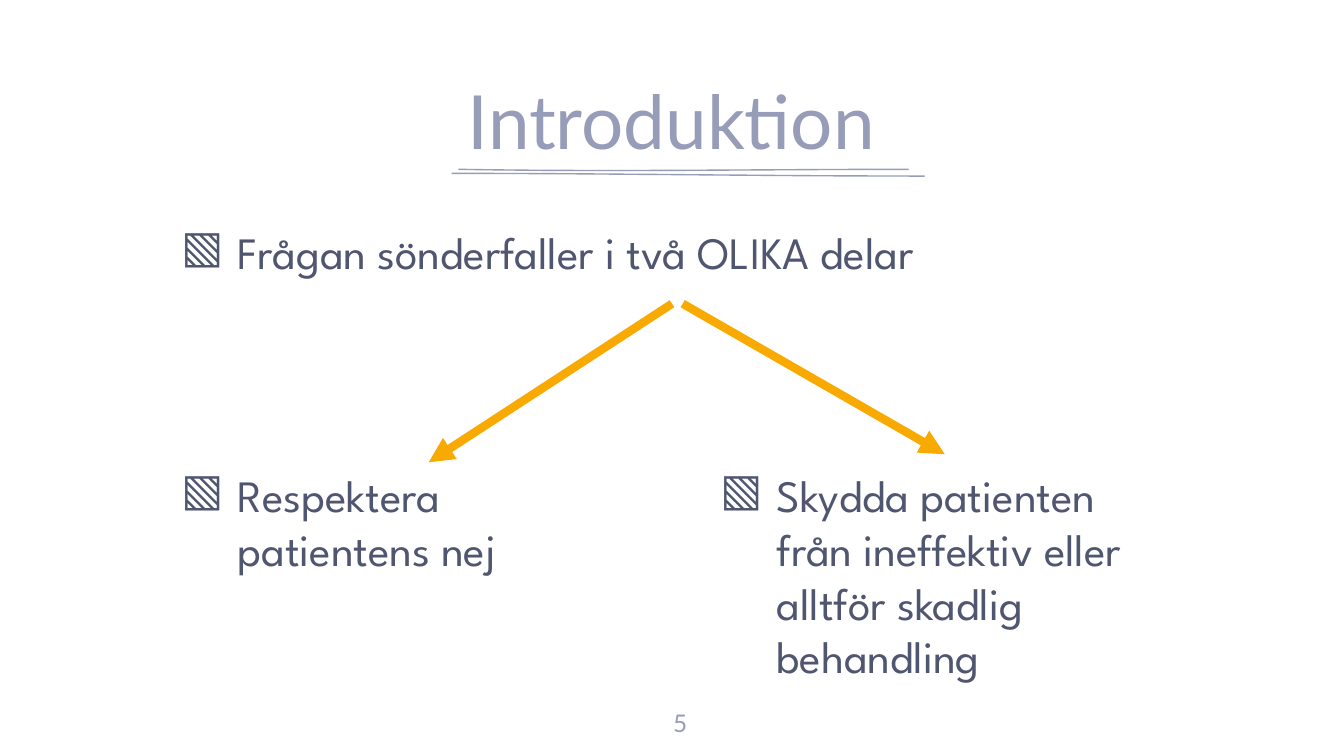
import pptx
import pptx.dml.color
import pptx.enum.shapes
import pptx.enum.text
import pptx.oxml
import pptx.oxml.ns
import pptx.util
from dataclasses import dataclass

Inches = pptx.util.Inches
Pt = pptx.util.Pt
Align = pptx.enum.text.PP_ALIGN
Anchor = pptx.enum.text.MSO_ANCHOR


@dataclass(frozen=True)
class Theme:
    heading_font: str = "Lato"
    body_font: str = "League Spartan"
    muted: str = "979CB8"
    dark: str = "505670"
    accent: str = "F9AA02"
    title_size: float = 40
    body_size: float = 24
    number_size: float = 13
    rule_width: float = 0.75
    arrow_width: float = 4.5


THEME = Theme()
SLIDE_WIDTH = 10
SLIDE_HEIGHT = SLIDE_WIDTH * 9 / 16
BULLET = "▧"
CURVE_STEPS = 16


def rgb(value):
    return pptx.dml.color.RGBColor.from_string(value)


def apply_format(target, values):
    for name, value in values.items():
        setattr(target, name, value)


def append_xml(parent, tag, **attributes):
    element = pptx.oxml.parse_xml(f"<a:{tag} {pptx.oxml.ns.nsdecls('a')}/>")
    for name, value in attributes.items():
        element.set(name, value)
    parent.append(element)
    return element


def add_text(slide, box, text, font, size, color, align=Align.LEFT,
             anchor=Anchor.TOP, bullet=False):
    shape = slide.shapes.add_textbox(*map(Inches, box))
    margins = {f"margin_{side}": Inches(0.1)
               for side in ("left", "top", "right", "bottom")}
    apply_format(shape.text_frame,
                 {"word_wrap": True, "vertical_anchor": anchor, **margins})
    paragraph = shape.text_frame.paragraphs[0]
    paragraph.alignment = align
    if bullet:
        add_bullet(paragraph, font, color)
    run = paragraph.add_run()
    run.text = text
    apply_format(run.font, {"name": font, "size": Pt(size)})
    run.font.color.rgb = rgb(color)


def add_bullet(paragraph, font, color):
    properties = paragraph._p.get_or_add_pPr()
    properties.set("marL", str(Inches(0.5)))
    properties.set("indent", str(Inches(-0.42)))
    append_xml(append_xml(properties, "buClr"), "srgbClr", val=color)
    append_xml(properties, "buFont", typeface=font)
    append_xml(properties, "buChar", char=BULLET)


def add_bullet_text(slide, box, text):
    add_text(slide, box, text, THEME.body_font, THEME.body_size, THEME.dark,
             bullet=True)


def curve_point(controls, t):
    weights = ((1 - t) ** 3, 3 * t * (1 - t) ** 2, 3 * t ** 2 * (1 - t), t ** 3)
    return tuple(Inches(sum(w * point[axis] for w, point in zip(weights, controls)))
                 for axis in (0, 1))


def add_curve(slide, controls):
    points = [curve_point(controls, step / CURVE_STEPS)
              for step in range(CURVE_STEPS + 1)]
    builder = slide.shapes.build_freeform(*points[0])
    builder.add_line_segments(points[1:], close=False)
    shape = builder.convert_to_shape()
    shape.shadow.inherit = False
    shape.fill.background()
    shape.line.color.rgb = rgb(THEME.muted)
    shape.line.width = Pt(THEME.rule_width)


def add_arrow(slide, start, end):
    connector = slide.shapes.add_connector(
        pptx.enum.shapes.MSO_CONNECTOR.STRAIGHT, *map(Inches, start + end))
    connector.line.color.rgb = rgb(THEME.accent)
    connector.line.width = Pt(THEME.arrow_width)
    append_xml(connector.line._get_or_add_ln(), "tailEnd", type="triangle")
    append_xml(connector._element.spPr, "effectLst")


def main():
    presentation = pptx.Presentation()
    apply_format(presentation, {"slide_width": Inches(SLIDE_WIDTH),
                                "slide_height": Inches(SLIDE_HEIGHT)})
    slide = presentation.slides.add_slide(presentation.slide_layouts[6])

    # Hand-drawn double rule under the title
    add_curve(slide, [(3.41, 1.26), (4.53, 1.28), (5.64, 1.26), (6.76, 1.26)])
    add_curve(slide, [(3.36, 1.29), (4.53, 1.29), (5.71, 1.31), (6.88, 1.31)])

    # Title and page number
    add_text(slide, (1.12, 0.57, 7.75, 0.75), "Introduktion",
             THEME.heading_font, THEME.title_size, THEME.muted,
             Align.CENTER, Anchor.BOTTOM)
    add_text(slide, (4.76, 5.17, 0.6, 0.33), "5",
             THEME.heading_font, THEME.number_size, THEME.muted, Align.CENTER)

    # The question and its two parts
    add_bullet_text(slide, (1.17, 1.57, 8, 3.35),
                    "Frågan sönderfaller i två OLIKA delar")
    add_bullet_text(slide, (1.17, 3.38, 3.12, 3.35),
                    "Respektera patientens nej")
    add_bullet_text(slide, (5.18, 3.38, 3.69, 3.35),
                    "Skydda patienten från ineffektiv eller alltför skadlig behandling")

    # Arrows from the question to each part
    add_arrow(slide, (5, 2.26), (3.19, 3.44))
    add_arrow(slide, (5.08, 2.26), (7.03, 3.38))

    presentation.save("out.pptx")


if __name__ == "__main__":
    main()
